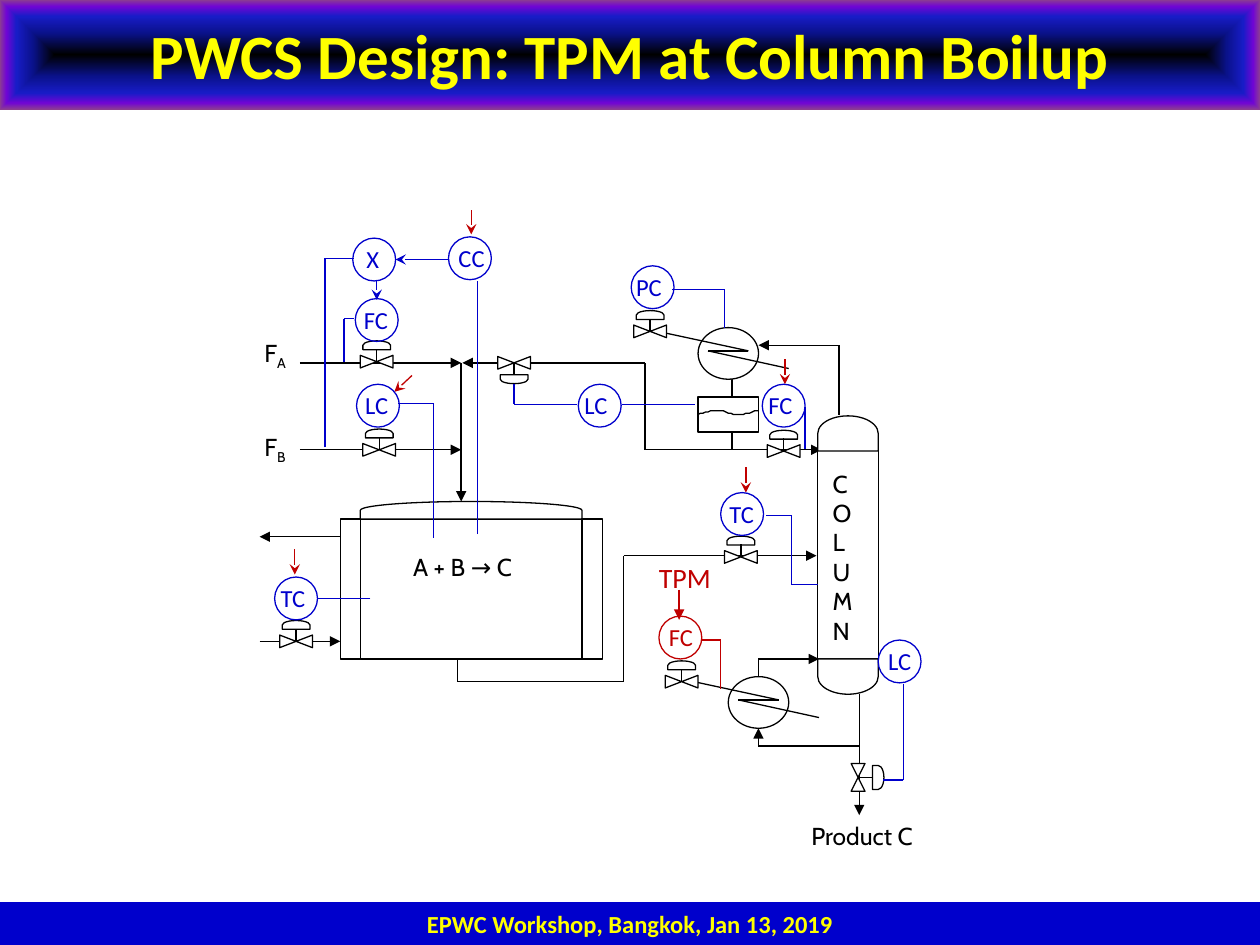
from itertools import pairwise

from pptx import Presentation
from pptx.dml.color import RGBColor
from pptx.enum.shapes import MSO_CONNECTOR, MSO_SHAPE
from pptx.enum.text import MSO_AUTO_SIZE, PP_ALIGN
from pptx.oxml import parse_xml
from pptx.oxml.ns import nsdecls, qn
from pptx.util import Inches, Pt

RECT, OVAL = MSO_SHAPE.RECTANGLE, MSO_SHAPE.OVAL
DELAY, COLLATE = MSO_SHAPE.FLOWCHART_DELAY, MSO_SHAPE.FLOWCHART_COLLATE
STRAIGHT = MSO_CONNECTOR.STRAIGHT
FIT = MSO_AUTO_SIZE.SHAPE_TO_FIT_TEXT
CENTER = PP_ALIGN.CENTER

BLACK, WHITE, BLUE, RED, YELLOW = "000000", "FFFFFF", "0000CC", "C00000", "FFFF00"
THEME = {
    "line": Pt(0.75),
    "banner": [(0, BLACK), (40, "0A128C"), (70, "181CC7"), (88, "7005D4"), (100, "8C3D91")],
    "title": (YELLOW, {"name": "Calibri", "size": Pt(36), "bold": True}),
    "footer": (YELLOW, {"name": "Calibri", "size": Pt(14), "bold": True}),
    "label": (BLACK, {"name": "Cabin", "size": Pt(14)}),
    "tag": (BLUE, {"name": "Calibri", "size": Pt(14)}),
    "red tag": (RED, {"name": "Calibri", "size": Pt(14)}),
    "tpm": (RED, {"name": "Calibri", "size": Pt(16)}),
}

prs = Presentation()
prs.slide_width, prs.slide_height = Inches(10), Inches(7.5)
slide = prs.slides.add_slide(prs.slide_layouts[6])
shapes = slide.shapes

# Grid of 1000 columns by 750 rows
COL, ROW = prs.slide_width // 1000, prs.slide_height // 750


def block(preset, x, y, w, h, angle=0, fill=WHITE, line=BLACK):
    s = shapes.add_shape(preset, int(x * COL), int(y * ROW), int(w * COL), int(h * ROW))
    s.rotation = angle
    s.shadow.inherit = False
    for paint, color in ((s.fill, fill), (s.line.fill, line)):
        if color:
            paint.solid()
            paint.fore_color.rgb = RGBColor.from_string(color)
        else:
            paint.background()
    if line:
        s.line.width = THEME["line"]
    return s


def wire(color, head, *points):
    for (x1, y1), (x2, y2) in pairwise(points):
        s = shapes.add_connector(STRAIGHT, int(x1 * COL), int(y1 * ROW), int(x2 * COL), int(y2 * ROW))
        s.line.color.rgb = RGBColor.from_string(color)
        s.line.width = THEME["line"]
        s._element.spPr.append(parse_xml(f"<a:effectLst {nsdecls('a')}/>"))
    if head:
        s.line._get_or_add_ln().append(parse_xml(f'<a:tailEnd {nsdecls("a")} type="{head}"/>'))


# Footer and title banner
footer = block(RECT, 0, 716, 1000, 34, fill=BLUE, line=None)
banner = block(RECT, 0, 0, 1000, 87, line=None)
stops = "".join(f'<a:gs pos="{pos * 1000}"><a:srgbClr val="{color}"/></a:gs>' for pos, color in THEME["banner"])
spPr = banner._element.spPr
spPr.replace(spPr.find(qn("a:solidFill")), parse_xml(
    f'<a:gradFill {nsdecls("a")}><a:gsLst>{stops}</a:gsLst><a:path path="rect">'
    '<a:fillToRect l="50000" t="50000" r="50000" b="50000"/></a:path></a:gradFill>'))
texts = [(footer, "EPWC Workshop, Bangkok, Jan 13, 2019", "footer"),
         (banner, "PWCS Design: TPM at Column Boilup", "title")]

# Reactor: shell, dome and jackets
block(RECT, 286, 412, 176, 111)
block(DELAY, 367, 317, 14, 176, 270)
for x in (270, 462):
    block(RECT, x, 412, 16, 111)

# Process streams
for head, *points in (
    ("triangle", (363, 523), (363, 541), (495, 541), (495, 441), (648, 441)),
    ("triangle", (206, 509), (270, 509)),
    ("triangle", (270, 426), (206, 426)),
    ("triangle", (238, 288), (366, 288)),
    ("triangle", (238, 357), (366, 357)),
    ("triangle", (366, 288), (366, 398)),
    ("triangle", (512, 357), (652, 357)),
    ("triangle", (512, 357), (512, 288), (367, 288)),
    ("triangle", (666, 329), (666, 274), (602, 274)),
    (None, (581, 301), (581, 315)),
    (None, (581, 343), (581, 357)),
    ("triangle", (682, 551), (682, 647)),
    ("triangle", (682, 592), (602, 592), (602, 578)),
    ("triangle", (602, 537), (602, 523), (650, 523)),
):
    wire(BLACK, head, *points)

# Reflux drum with its liquid level
block(RECT, 554, 315, 48, 28)
level = [(554, 329), (559, 327), (565, 326), (570, 326), (575, 326),
         (581, 329), (586, 329), (591, 329), (599, 326), (602, 326)]
curve = []
for k in (0, 3, 6):
    for t in (step / 8 for step in range(9)):
        weights = ((1 - t) ** 3, 3 * t * (1 - t) ** 2, 3 * t ** 2 * (1 - t), t ** 3)
        curve.append([sum(w * p[axis] for w, p in zip(weights, level[k:k + 4])) for axis in (0, 1)])
pen = shapes.build_freeform(*curve[0], scale=(COL, ROW))
pen.add_line_segments(curve[1:], close=False)
s = pen.convert_to_shape()
s.shadow.inherit = False
s.fill.background()
s.line.color.rgb = RGBColor.from_string(BLACK)
s.line.width = THEME["line"]

# Condenser and reboiler
for x, y in ((554, 260), (578, 537)):
    block(OVAL, x, y, 48, 41)
    wire(BLACK, None, (x - 25, y + 4.5), (x + 40, y + 18.5), (x + 8, y + 18.5), (x + 72, y + 32.5))

# Control valves: angle gives the side of the actuator
# angle: actuator offset, stem offset, body size, actuator size
VALVES = {270: ((0, -13), (0, -10), (10, 26), (7, 22)),
          90: ((0, 13), (0, 9), (10, 26), (7, 22)),
          0: ((16, 0), (11, 0), (11, 22), (9, 19))}
for x, y, angle in ((299, 287, 270), (301, 357, 270), (235, 509, 270), (408, 288, 90), (588, 442, 270),
                    (622, 358, 270), (516, 263, 270), (541, 541, 270), (681, 617, 0)):
    (dx, dy), (sx, sy), (bw, bh), (aw, ah) = VALVES[angle]
    block(COLLATE, x - bw / 2, y - bh / 2, bw, bh, angle)
    block(DELAY, x + dx - aw / 2, y + dy - ah / 2, aw, ah, angle)
    wire(BLACK, None, (x, y), (x + sx, y + sy))

# Distillation column: shell, top and bottom heads
block(RECT, 649, 357, 48, 166)
block(DELAY, 659, 320, 28, 48, 270)
block(DELAY, 659, 513, 28, 48, 90)

# Control signals
for color, head, *points in (
    (BLUE, None, (575, 260), (575, 230), (533, 230)),
    (BLUE, None, (639, 356), (639, 323)),
    (BLUE, None, (408, 305), (408, 321), (458, 321)),
    (BLUE, None, (494, 321), (552, 321)),
    (BLUE, None, (294, 475), (252, 475)),
    (BLUE, None, (379, 424), (379, 223)),
    (BLUE, "stealth", (356, 206), (314, 206)),
    (BLUE, None, (273, 287), (273, 253), (281, 253)),
    (BLUE, None, (258, 355), (258, 205), (281, 205)),
    (BLUE, "stealth", (299, 222), (299, 238)),
    (BLUE, None, (344, 427), (344, 320), (316, 320)),
    (BLUE, None, (608, 409), (628, 409), (628, 464), (649, 464)),
    (BLUE, None, (717, 543), (717, 619), (701, 619)),
    (RED, None, (557, 508), (572, 508), (572, 547)),
    (RED, "triangle", (539, 468), (539, 492)),
    (RED, "stealth", (592, 371), (592, 391)),
    (RED, "stealth", (623, 285), (623, 305)),
    (RED, "stealth", (234, 436), (234, 456)),
    (RED, "stealth", (327, 298), (313, 311)),
    (RED, "stealth", (374, 167), (374, 186)),
):
    wire(color, head, *points)

# Controllers: tag, circle corner, text left and width
labels = [("TPM", 513, 440, 62, 37, "tpm")]
for tag, x, y, left, width, style in (
    ("PC", 501, 211, 495, 47, "tag"), ("FC", 605, 305, 600, 46, "tag"), ("LC", 459, 305, 454, 46, "tag"),
    ("TC", 218, 458, 213, 46, "tag"), ("CC", 356, 188, 354, 48, "tag"), ("FC", 282, 237, 279, 46, "tag"),
    ("X", 280, 189, 281, 33, "tag"), ("LC", 283, 305, 280, 46, "tag"), ("TC", 572, 391, 569, 40, "tag"),
    ("FC", 523, 489, 521, 39, "red tag"), ("LC", 697, 508, 695, 39, "tag"),
):
    block(OVAL, x, y, 34, 34, fill=None, line=THEME[style][0])
    labels.append((tag, left, y, width, 33, style))

# Text boxes; an underscore starts a subscript
labels += [("A + B → C", 318, 433, 128, 111, "label"), ("F_A", 200, 263, 51, 42, "label"),
           ("F_B", 200, 338, 63, 41, "label"), ("Product C", 634, 647, 112, 32, "label"),
           ("C\nO\nL\nU\nM\nN", 651, 367, 48, 138, "label")]
for text, x, y, w, h, style in labels:
    s = shapes.add_textbox(x * COL, y * ROW, w * COL, h * ROW)
    s.text_frame.word_wrap = style == "label"
    if style != "label":
        s.text_frame.auto_size = FIT
    texts.append((s, text, style))

# Write and format all text
for s, text, style in texts:
    color, font = THEME[style]
    tf = s.text_frame
    for i, row in enumerate(text.split("\n")):
        p = tf.add_paragraph() if i else tf.paragraphs[0]
        if style in ("title", "footer"):
            p.alignment = CENTER
        for j, part in enumerate(row.split("_")):
            r = p.add_run()
            r.text = part
            r.font.color.rgb = RGBColor.from_string(color)
            for name, value in font.items():
                setattr(r.font, name, value)
            if j:
                r._r.get_or_add_rPr().set("baseline", "-25000")

prs.save("out.pptx")
